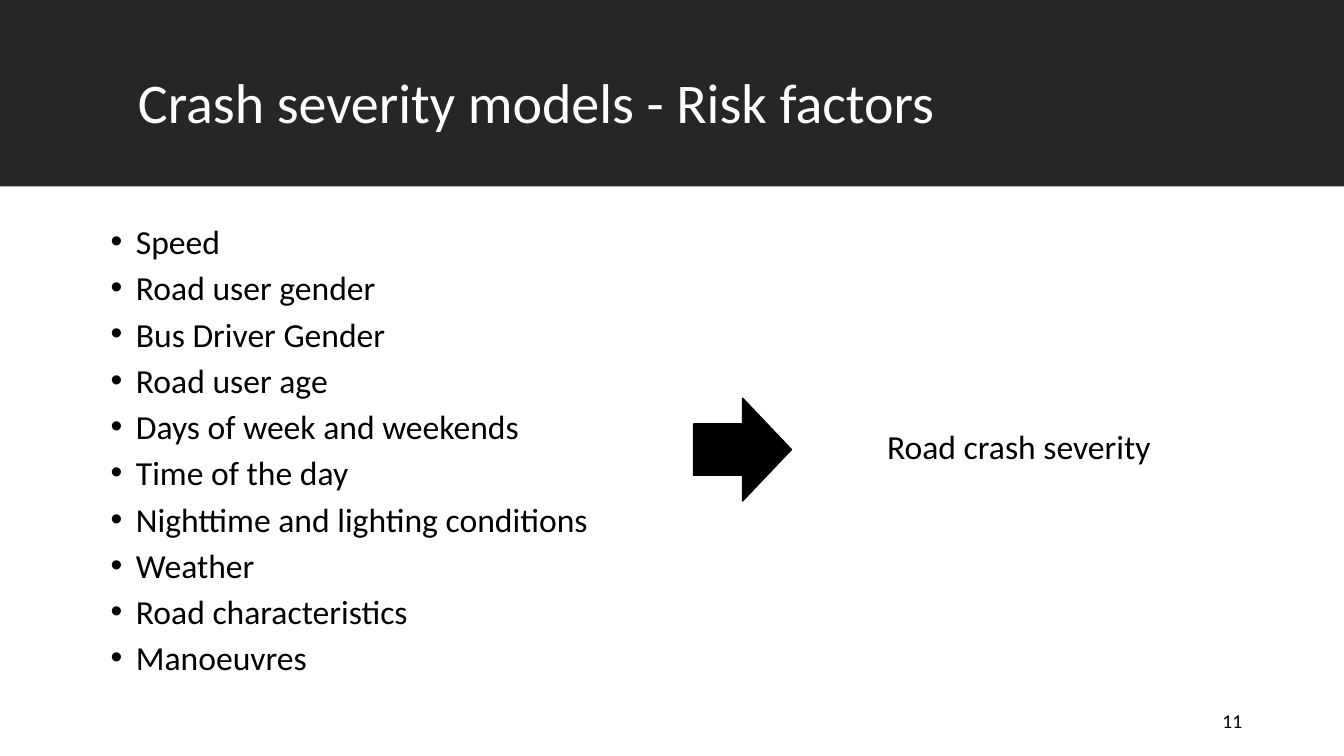
from dataclasses import dataclass

from lxml.etree import SubElement
from pptx import Presentation
from pptx.dml.color import RGBColor
from pptx.enum.shapes import MSO_SHAPE
from pptx.enum.text import MSO_ANCHOR, PP_ALIGN
from pptx.oxml.ns import qn
from pptx.util import Emu, Pt

EMU_PER_PX = 9144
BULLET_INDENT = 25


@dataclass(frozen=True)
class Theme:
    font: str = "Calibri"
    band: RGBColor = RGBColor(0x26, 0x26, 0x26)
    ink: RGBColor = RGBColor(0, 0, 0)
    paper: RGBColor = RGBColor(0xFF, 0xFF, 0xFF)
    title_size: int = 40
    body_size: int = 24
    number_size: int = 14


THEME = Theme()

RISK_FACTORS = [
    "Speed",
    "Road user gender",
    "Bus Driver Gender",
    "Road user age",
    "Days of week and weekends",
    "Time of the day",
    "Nighttime and lighting conditions",
    "Weather",
    "Road characteristics",
    "Manoeuvres",
]


def px(length):
    return Emu(length * EMU_PER_PX)


def add_solid_shape(slide, kind, box, color, outlined=False):
    shape = slide.shapes.add_shape(kind, *map(px, box))
    shape.shadow.inherit = False
    shape.fill.solid()
    shape.fill.fore_color.rgb = color
    if outlined:
        shape.line.color.rgb = color
        shape.line.width = Pt(1)
    else:
        shape.line.fill.background()


def add_bullet(paragraph):
    properties = paragraph._p.get_or_add_pPr()
    properties.set("marL", str(px(BULLET_INDENT)))
    properties.set("indent", str(px(-BULLET_INDENT)))
    SubElement(properties, qn("a:buFont"), typeface="Arial")
    SubElement(properties, qn("a:buChar"), char="•")


def add_text(slide, box, lines, size, color, line_spacing=0.9, bulleted=False,
             alignment=PP_ALIGN.LEFT, anchor=MSO_ANCHOR.TOP):
    text_frame = slide.shapes.add_textbox(*map(px, box)).text_frame
    text_frame.word_wrap = True
    text_frame.vertical_anchor = anchor
    text_frame.text = "\n".join(lines)
    for index, paragraph in enumerate(text_frame.paragraphs):
        if bulleted:
            add_bullet(paragraph)
        paragraph.alignment = alignment
        paragraph.line_spacing = line_spacing
        paragraph.space_before = Pt(10 if index else 0)
        for run in paragraph.runs:
            run.font.name = THEME.font
            run.font.size = Pt(size)
            run.font.color.rgb = color


def main():
    presentation = Presentation()
    presentation.slide_width = px(1333)
    presentation.slide_height = px(750)
    slide = presentation.slides.add_slide(presentation.slide_layouts[6])
    slide.background.fill.solid()
    slide.background.fill.fore_color.rgb = THEME.paper

    add_solid_shape(slide, MSO_SHAPE.RECTANGLE, (0, 0, 1333, 185), THEME.band)
    add_text(slide, (127, 70, 1081, 98), ["Crash severity models - Risk factors"],
             THEME.title_size, THEME.paper)
    add_text(slide, (100, 222, 566, 476), RISK_FACTORS, THEME.body_size, THEME.ink,
             line_spacing=0.8, bulleted=True)
    add_solid_shape(slide, MSO_SHAPE.RIGHT_ARROW, (688, 395, 97, 102), THEME.ink,
                    outlined=True)
    add_text(slide, (870, 422, 341, 63), ["Road crash severity"],
             THEME.body_size, THEME.ink)
    add_text(slide, (942, 695, 300, 40), ["11"], THEME.number_size, THEME.ink,
             line_spacing=1.0, alignment=PP_ALIGN.RIGHT, anchor=MSO_ANCHOR.MIDDLE)

    presentation.save("out.pptx")


if __name__ == "__main__":
    main()
